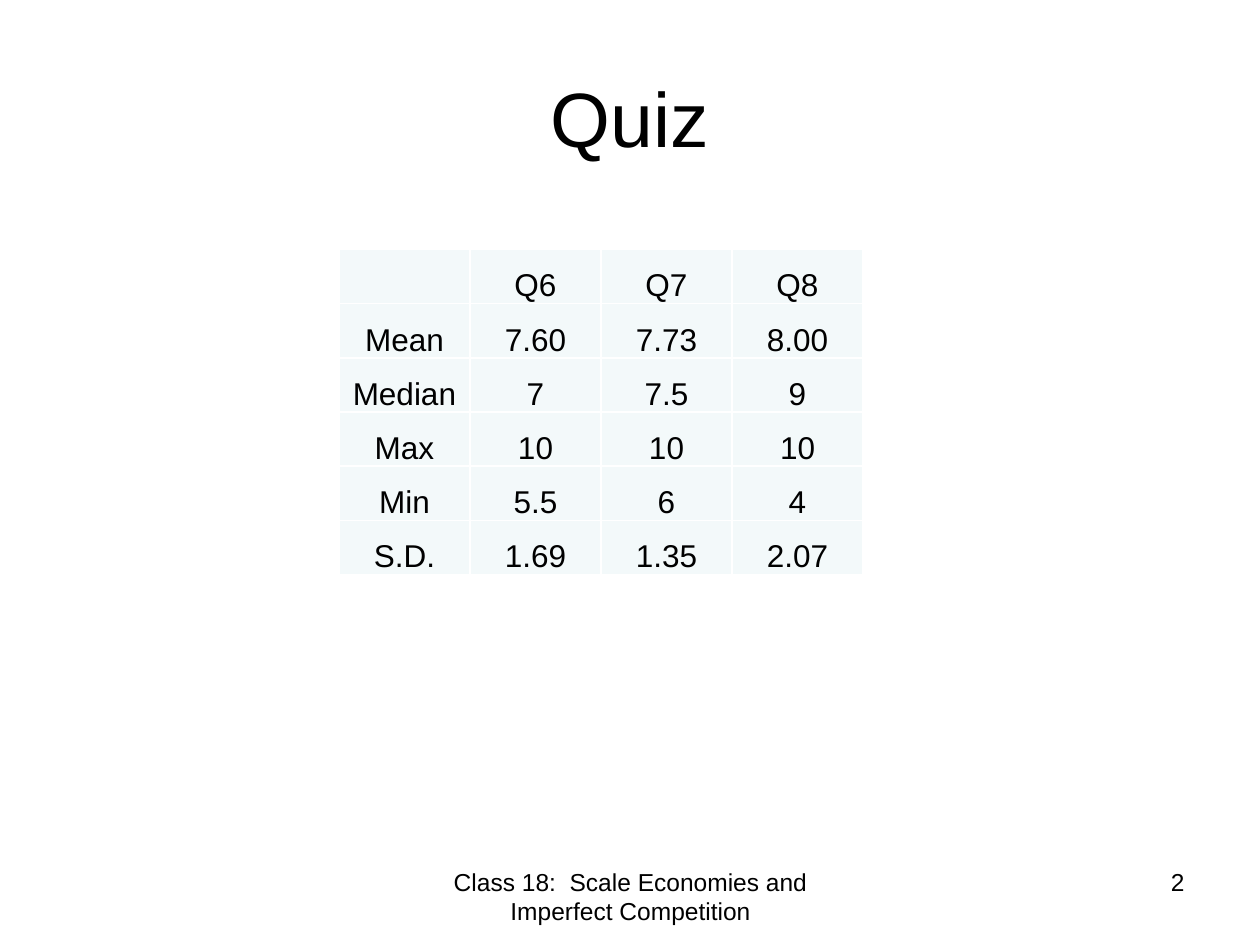
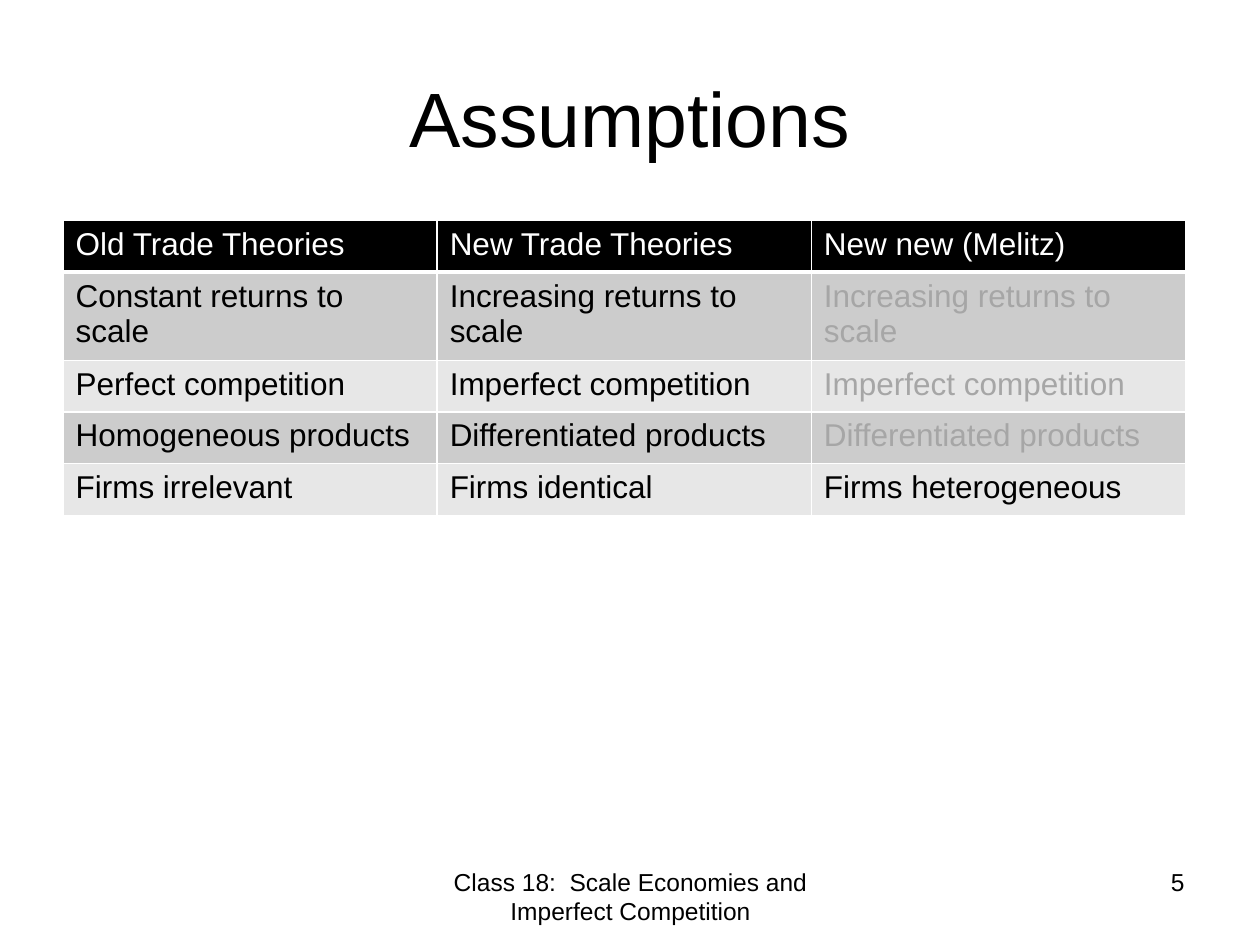
from dataclasses import dataclass

from lxml import etree
from pptx import Presentation
from pptx.dml.color import RGBColor
from pptx.enum import text as t
from pptx.oxml import ns
from pptx.util import Inches, Pt

FONT = "Arial"
COLORS = {
    "ink": "000000",
    "paper": "FFFFFF",
    "muted": "A6A6A6",
    "quiz": "F3F9FA",
    "band_dark": "CCCCCC",
    "band_light": "E7E7E7",
}
FOOTER = "Class 18:  Scale Economies and Imperfect Competition"
CENTER, LEFT, RIGHT = t.PP_ALIGN.CENTER, t.PP_ALIGN.LEFT, t.PP_ALIGN.RIGHT
TOP, MIDDLE, BOTTOM = t.MSO_ANCHOR.TOP, t.MSO_ANCHOR.MIDDLE, t.MSO_ANCHOR.BOTTOM


@dataclass(frozen=True)
class TextSpec:
    left: float
    top: float
    width: float
    height: float
    size: int
    align: t.PP_ALIGN
    anchor: t.MSO_ANCHOR = TOP


@dataclass(frozen=True)
class TableSpec:
    left: float
    top: float
    col_width: float
    row_height: float
    rows: list[list[str]]
    bands: tuple[str, ...]
    align: t.PP_ALIGN = LEFT
    anchor: t.MSO_ANCHOR = TOP
    margins: tuple[float, float, float, float] = (0.1, 0.05, 0.1, 0.05)
    dark_header: bool = False


TITLE = TextSpec(0.5, 0.3, 9, 1.25, 44, CENTER, MIDDLE)
FOOTER_BOX = TextSpec(3.42, 6.83, 3.17, 0.52, 14, CENTER)
NUMBER_BOX = TextSpec(7.17, 6.83, 2.33, 0.52, 14, RIGHT)

QUIZ = TableSpec(
    2.69, 1.98, 1.04, 0.43,
    [
        ["", "Q6", "Q7", "Q8"],
        ["Mean", "7.60", "7.73", "8.00"],
        ["Median", "7", "7.5", "9"],
        ["Max", "10", "10", "10"],
        ["Min", "5.5", "6", "4"],
        ["S.D.", "1.69", "1.35", "2.07"],
    ],
    bands=("quiz",), align=CENTER, anchor=BOTTOM, margins=(0.01, 0.01, 0.01, 0),
)
ASSUMPTIONS = TableSpec(
    0.5, 1.75, 2.97, 0.41,
    [
        ["Old Trade Theories", "New Trade Theories", "New new (Melitz)"],
        ["Constant returns to scale"] + ["Increasing returns to scale"] * 2,
        ["Perfect competition"] + ["Imperfect competition"] * 2,
        ["Homogeneous products"] + ["Differentiated products"] * 2,
        ["Firms irrelevant", "Firms identical", "Firms heterogeneous"],
    ],
    bands=("band_light", "band_dark"), dark_header=True,
)


def rgb(name: str) -> RGBColor:
    return RGBColor.from_string(COLORS[name])


def style_paragraph(p, size: int, align: t.PP_ALIGN, color: str = "ink") -> None:
    p.alignment = align
    p.font.name = FONT
    p.font.size = Pt(size)
    p.font.bold = False
    p.font.color.rgb = rgb(color)


def add_text(s, box: TextSpec, content: str) -> None:
    sp = s.shapes.add_textbox(
        *(Inches(v) for v in (box.left, box.top, box.width, box.height)))
    tf = sp.text_frame
    tf.word_wrap = True
    tf.vertical_anchor = box.anchor
    tf.text = content
    style_paragraph(tf.paragraphs[0], box.size, box.align)


def set_borders(cell, bottom: int = 1) -> None:
    """Draw paper-coloured cell edges; widths are in points."""
    tc_pr = cell._tc.get_or_add_tcPr()
    widths = {"a:lnL": 1, "a:lnR": 1, "a:lnT": 1, "a:lnB": bottom}
    for i, (tag, width) in enumerate(widths.items()):
        ln = etree.Element(ns.qn(tag), w=str(Pt(width)))
        fill = etree.SubElement(ln, ns.qn("a:solidFill"))
        etree.SubElement(fill, ns.qn("a:srgbClr"), val=COLORS["paper"])
        tc_pr.insert(i, ln)


def add_table(s, spec: TableSpec) -> None:
    n_rows, n_cols = len(spec.rows), len(spec.rows[0])
    table = s.shapes.add_table(
        n_rows, n_cols, Inches(spec.left), Inches(spec.top),
        Inches(spec.col_width * n_cols), Inches(spec.row_height * n_rows)).table
    table.first_row = spec.dark_header
    table.horz_banding = len(spec.bands) > 1
    for col in table.columns:
        col.width = Inches(spec.col_width)
    for i, values in enumerate(spec.rows):
        table.rows[i].height = Inches(spec.row_height)
        header = spec.dark_header and i == 0
        for j, value in enumerate(values):
            cell = table.cell(i, j)
            cell.text = value
            cell.vertical_anchor = spec.anchor
            (cell.margin_left, cell.margin_top, cell.margin_right,
             cell.margin_bottom) = (Inches(m) for m in spec.margins)
            cell.fill.solid()
            cell.fill.fore_color.rgb = rgb(
                "ink" if header else spec.bands[i % len(spec.bands)])
            set_borders(cell, bottom=3 if header else 1)
            # An assumption carried over from the theory to its left is muted
            carried_over = j > 0 and value == values[j - 1] and spec.dark_header
            color = "paper" if header else "muted" if carried_over else "ink"
            style_paragraph(cell.text_frame.paragraphs[0], 18, spec.align, color)


def add_slide(prs, title: str, number: int, table: TableSpec) -> None:
    s = prs.slides.add_slide(prs.slide_layouts[6])
    s.background.fill.solid()
    s.background.fill.fore_color.rgb = rgb("paper")
    add_text(s, TITLE, title)
    add_table(s, table)
    add_text(s, FOOTER_BOX, FOOTER)
    add_text(s, NUMBER_BOX, str(number))


def main() -> None:
    prs = Presentation()
    prs.slide_width, prs.slide_height = Inches(10), Inches(7.5)
    add_slide(prs, "Quiz", 2, QUIZ)
    add_slide(prs, "Assumptions", 5, ASSUMPTIONS)
    prs.save("out.pptx")


if __name__ == "__main__":
    main()
